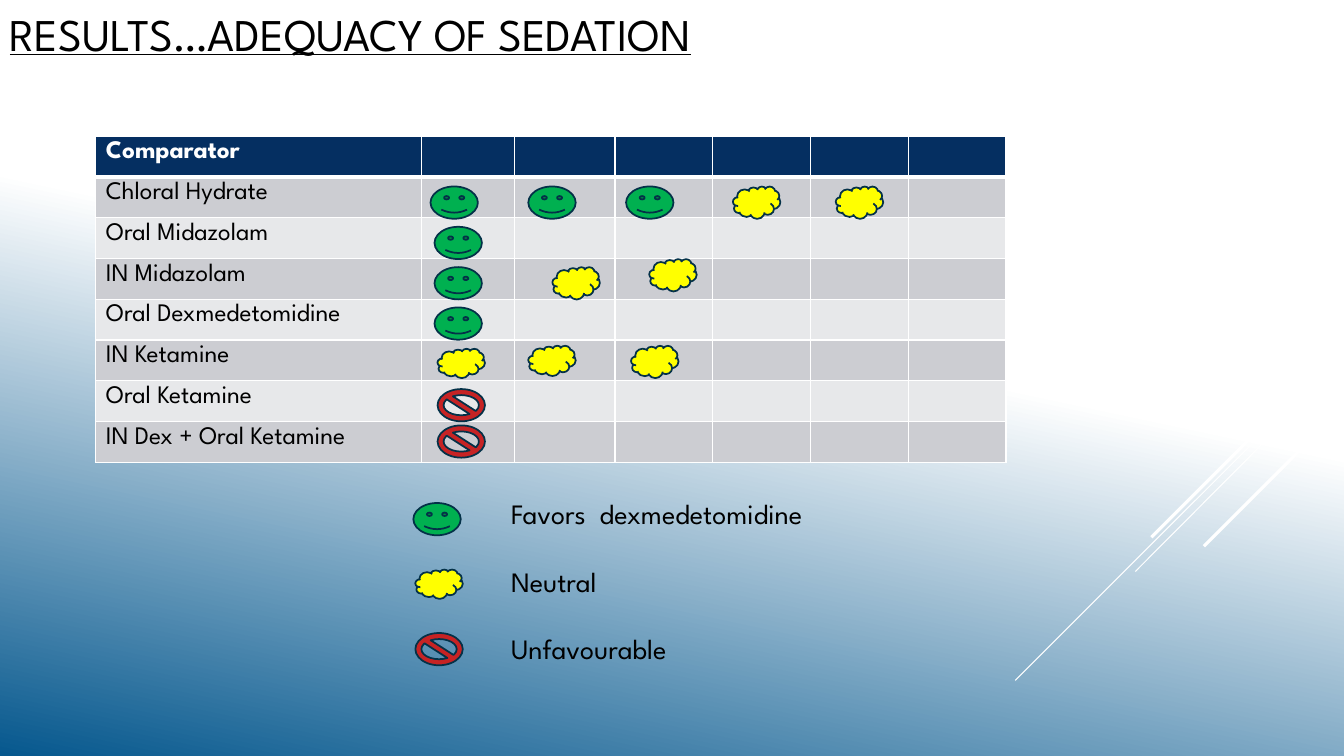
from lxml.etree import SubElement
from pptx import Presentation
from pptx.dml.color import RGBColor
from pptx.enum.shapes import MSO_CONNECTOR, MSO_SHAPE
from pptx.enum.text import MSO_ANCHOR
from pptx.oxml.ns import qn
from pptx.util import Inches, Pt

HUES = {
    "white": "FFFFFF", "black": "000000", "sky": "06588E", "navy": "052F61",
    "dark": "CCCDD2", "light": "E7E8EA", "edge": "043148",
    "green": "00B050", "yellow": "FFFF00", "red": "C62324",
}
FACE = "League Spartan"
STYLES = {
    "title": {"name": FACE, "size": Pt(32.4), "underline": True},
    "head": {"name": FACE, "size": Pt(18), "bold": True},
    "body": {"name": FACE, "size": Pt(18), "bold": False},
    "key": {"name": FACE, "size": Pt(20)},
}
ICONS = {
    "good": (MSO_SHAPE.SMILEY_FACE, "green"),
    "even": (MSO_SHAPE.CLOUD, "yellow"),
    "bad": (MSO_SHAPE.NO_SYMBOL, "red"),
}
RAYS = [
    (3.24, 12.33, 4.24, 0.75), (3.49, 10.07, 6.75, 0.75),
    (3.59, 11.26, 5.67, 0.75), (3.42, 11.42, 5.33, 2.25),
    (4.03, 11.94, 5.42, 2.25),
]
DRUGS = [
    "Comparator", "Chloral Hydrate", "Oral Midazolam", "IN Midazolam",
    "Oral Dexmedetomidine", "IN Ketamine", "Oral Ketamine",
    "IN Dex + Oral Ketamine",
]
WIDTHS = [3.23, 0.92, 1, 0.97, 0.97, 0.97, 0.97]
MARKS = [
    ("good", 3.32, 0.5, 0.32), ("good", 4.29, 0.5, 0.32),
    ("good", 5.26, 0.5, 0.32), ("good", 3.36, 0.9, 0.32),
    ("good", 3.36, 1.3, 0.32), ("good", 3.36, 1.7, 0.32),
    ("even", 6.32, 0.5, 0.32), ("even", 7.34, 0.5, 0.32),
    ("even", 4.53, 1.3, 0.32), ("even", 5.49, 1.22, 0.32),
    ("even", 3.39, 2.11, 0.29), ("even", 4.29, 2.08, 0.3),
    ("even", 5.31, 2.08, 0.32), ("bad", 3.39, 2.51, 0.32),
    ("bad", 3.39, 2.87, 0.32),
]
LEGEND = [
    ("Favors  dexmedetomidine", ("good", 0, 0.11, 0.32)),
    ("Neutral", ("even", 0.02, 0.77, 0.29)),
    ("Unfavourable", ("bad", 0.02, 1.4, 0.32)),
]


def tint(name):
    return RGBColor.from_string(HUES[name])


def apply(item, values):
    for name, value in values.items():
        setattr(item, name, value)


def write(para, text, style, hue="black"):
    run = para.add_run()
    run.text = text
    apply(run.font, STYLES[style])
    run.font.color.rgb = tint(hue)


def paint(slide):
    fill = slide.background.fill
    fill.gradient()
    fill.gradient_angle = 258
    for stop, (place, hue) in zip(fill.gradient_stops, [(0.44, "white"), (1, "sky")]):
        stop.position = place
        stop.color.rgb = tint(hue)


def add_rays(slide, right):
    for top, left, base, width in RAYS:
        ray = slide.shapes.add_connector(
            MSO_CONNECTOR.STRAIGHT, Inches(right), Inches(top), Inches(left), Inches(base))
        ray.line.color.rgb = tint("white")
        ray.line.width = Pt(width)
        SubElement(ray._element.spPr, qn("a:effectLst"))


def add_title(slide, box):
    frame = slide.shapes.add_textbox(*map(Inches, box)).text_frame
    apply(frame, {"word_wrap": True, "vertical_anchor": MSO_ANCHOR.TOP,
                  "margin_top": Inches(0.12)})
    para = frame.paragraphs[0]
    para.line_spacing = 0.9
    write(para, "RESULTS…ADEQUACY OF SEDATION", "title")


def add_icon(slide, left, top, mark):
    kind, right, down, height = mark
    form, hue = ICONS[kind]
    icon = slide.shapes.add_shape(
        form, Inches(left + right), Inches(top + down), Inches(0.47), Inches(height))
    icon.shadow.inherit = False
    icon.fill.solid()
    icon.fill.fore_color.rgb = tint(hue)
    icon.line.color.rgb = tint("edge")
    icon.line.width = Pt(1.25)


def add_edges(cell, sides):
    props = cell._tc.get_or_add_tcPr()
    for place, (side, width) in enumerate(sides.items()):
        line = SubElement(props, qn("a:" + side), w=str(Pt(width)))
        fill = SubElement(line, qn("a:solidFill"))
        SubElement(fill, qn("a:srgbClr"), val=HUES["white"])
        props.insert(place, line)


def add_grid(slide, box):
    left, top, width, height = box
    grid = slide.shapes.add_table(len(DRUGS), len(WIDTHS), *map(Inches, box)).table
    for column, size in zip(grid.columns, WIDTHS):
        column.width = Inches(size)
    for index, drug in enumerate(DRUGS):
        grid.rows[index].height = Inches(height / len(DRUGS))
        head = index == 0
        hue = "navy" if head else "dark" if index % 2 else "light"
        sides = {"lnL": 1, "lnR": 1, "lnT": 3 if index == 1 else 1, "lnB": 3 if head else 1}
        for cell in grid.rows[index].cells:
            cell.fill.solid()
            cell.fill.fore_color.rgb = tint(hue)
            add_edges(cell, sides)
        write(grid.cell(index, 0).text_frame.paragraphs[0], drug,
              "head" if head else "body", "white" if head else "black")
    for mark in MARKS:
        add_icon(slide, left, top, mark)


def add_legend(slide, box):
    left, top, width, height = box
    inset = 0.87
    frame = slide.shapes.add_textbox(
        Inches(left + inset), Inches(top), Inches(width - inset), Inches(height)).text_frame
    frame.word_wrap = True
    for index, (label, mark) in enumerate(LEGEND):
        para = frame.add_paragraph() if index else frame.paragraphs[0]
        if index:
            para.space_before = Pt(24)
        write(para, label, "key")
        add_icon(slide, left, top, mark)


def main():
    deck = Presentation()
    apply(deck, {"slide_width": Inches(13.33), "slide_height": Inches(7.5)})
    slide = deck.slides.add_slide(deck.slide_layouts[6])
    paint(slide)
    add_rays(slide, 13.33)
    add_title(slide, (0, 0, 10.64, 1.23))
    add_grid(slide, (0.95, 1.35, 9.05, 3.24))
    add_legend(slide, (4.1, 4.88, 4.62, 1.78))
    deck.save("out.pptx")


if __name__ == "__main__":
    main()
